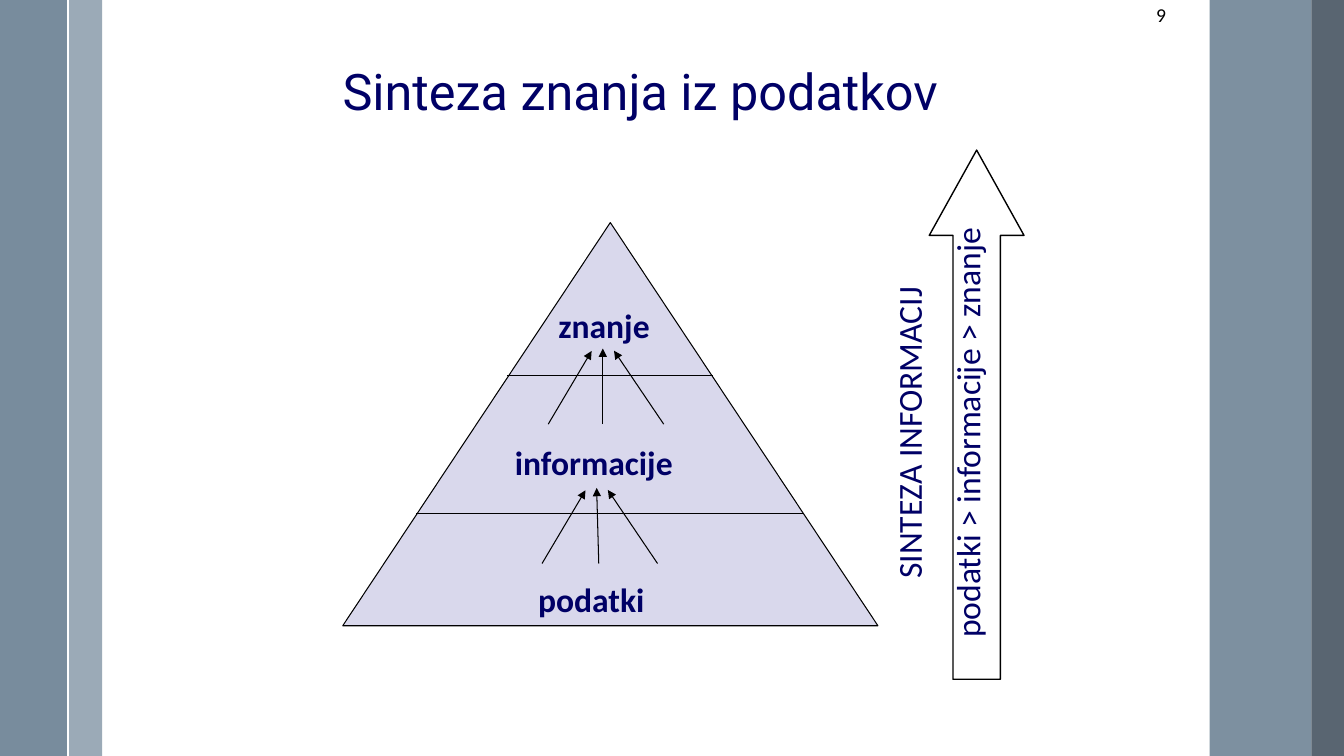
import pptx
import pptx.util
import pptx.dml.color
import pptx.enum.shapes
import pptx.enum.text
import pptx.oxml.ns
from lxml import etree

Pt = pptx.util.Pt
MSO_SHAPE = pptx.enum.shapes.MSO_SHAPE
ANCHOR = pptx.enum.text.MSO_ANCHOR
ALIGN = pptx.enum.text.PP_ALIGN
qn = pptx.oxml.ns.qn

COLORS = {
    "pale": "9BAAB7",
    "steel": "6A8093",
    "slate": "475562",
    "lilac": "D9D8EC",
    "navy": "000066",
    "black": "000000",
    "white": "FFFFFF",
}
TITLE = {"size": Pt(36), "name": "Roboto"}
NUMBER = {"size": Pt(14), "name": "Calibri"}
BODY = {"size": Pt(24), "name": "Calibri"}
LABEL = {**BODY, "bold": True}


def rgb(color):
    return pptx.dml.color.RGBColor.from_string(COLORS[color])


def add_shape(s, kind, box, fill=None, alpha=100, line=None, width=0.75, adj=()):
    sp = s.shapes.add_shape(kind, *map(Pt, box))
    sp.shadow.inherit = False
    if fill:
        sp.fill.solid()
        sp.fill.fore_color.rgb = rgb(fill)
        if alpha < 100:
            clr = sp._element.spPr.find(qn("a:solidFill"))[0]
            etree.SubElement(clr, qn("a:alpha")).set("val", str(alpha * 1000))
    else:
        sp.fill.background()
    if line:
        sp.line.color.rgb = rgb(line)
        sp.line.width = Pt(width)
    else:
        sp.line.fill.background()
    for i, value in enumerate(adj):
        sp.adjustments[i] = value


def add_text(s, box, lines, font, color="navy", align=ALIGN.LEFT,
             anchor=ANCHOR.TOP, spacing=0.93, rotation=0):
    sp = s.shapes.add_textbox(*map(Pt, box))
    sp.rotation = rotation
    tf = sp.text_frame
    tf.word_wrap = True
    tf.vertical_anchor = anchor
    for i, line in enumerate(lines):
        p = tf.add_paragraph() if i else tf.paragraphs[0]
        p.alignment = align
        p.line_spacing = spacing
        if i:
            p.space_before = Pt(15)
        r = p.add_run()
        r.text = line
        for key, value in font.items():
            setattr(r.font, key, value)
        r.font.color.rgb = rgb(color)


def add_line(s, x1, y1, x2, y2, color="black", width=0.75, arrow=False):
    cn = s.shapes.add_connector(
        pptx.enum.shapes.MSO_CONNECTOR.STRAIGHT, *map(Pt, (x1, y1, x2, y2)))
    cn.line.color.rgb = rgb(color)
    cn.line.width = Pt(width)
    if arrow:
        ln = cn.line._get_or_add_ln()
        etree.SubElement(ln, qn("a:tailEnd")).set("type", "triangle")
    etree.SubElement(cn._element.spPr, qn("a:effectLst"))


def add_fan(s, x, y, middle_foot):
    feet = (x - 39, middle_foot, x + 43.5)
    heads = ((x - 8, y - 52.3), (x, y - 54), (x + 8, y - 52.5))
    for foot, (head_x, head_y) in zip(feet, heads):
        add_line(s, foot, y, head_x, head_y, arrow=True)


def add_side_bars(s):
    for left, width, fill, alpha in (
        (49, 24, "pale", 100),
        (0, 48.5, "steel", 90),
        (864, 72.7, "steel", 87),
        (936.7, 23.3, "slate", 90),
    ):
        add_shape(s, MSO_SHAPE.RECTANGLE, (left, 0, width, 540), fill, alpha)
    add_line(s, 48.5, 0, 48.5, 540, "white", 1.5)


def add_pyramid(s):
    add_shape(s, MSO_SHAPE.ISOSCELES_TRIANGLE, (244.8, 159, 382.3, 288),
              "lilac", line="black")
    for left, right, y in ((362.2, 509, 268.5), (297.5, 573.8, 366.5)):
        add_line(s, left, y, right, y)
    levels = (("znanje", 391.7, 97.2), ("informacije", 360.7, 155.5),
              ("podatki", 377.3, 106.6))
    for i, (label, left, width) in enumerate(levels):
        add_text(s, (left, 216.7 + 98 * i, width, 34.6), [label], LABEL)
    add_fan(s, 430.6, 303, 430.6)
    add_fan(s, 426.2, 402.5, 427.7)


def main():
    prs = pptx.Presentation()
    prs.slide_width, prs.slide_height = Pt(960), Pt(540)
    s = prs.slides.add_slide(prs.slide_layouts[6])
    add_side_bars(s)
    add_text(s, (672, 0, 168, 36), ["9"], NUMBER, "black", ALIGN.RIGHT)
    add_text(s, (237.6, 21.6, 602.6, 68.4), ["Sinteza znanja iz podatkov"],
             TITLE, anchor=ANCHOR.BOTTOM, spacing=0.9)
    add_text(s, (442, 270.7, 460, 77),
             ["SINTEZA INFORMACIJ", "podatki > informacije > znanje"],
             BODY, align=ALIGN.CENTER, rotation=270)
    add_shape(s, MSO_SHAPE.UP_ARROW, (663.8, 107.2, 67.7, 378),
              line="black", width=1, adj=(0.5, 0.9))
    add_pyramid(s)
    prs.save("out.pptx")


if __name__ == "__main__":
    main()
